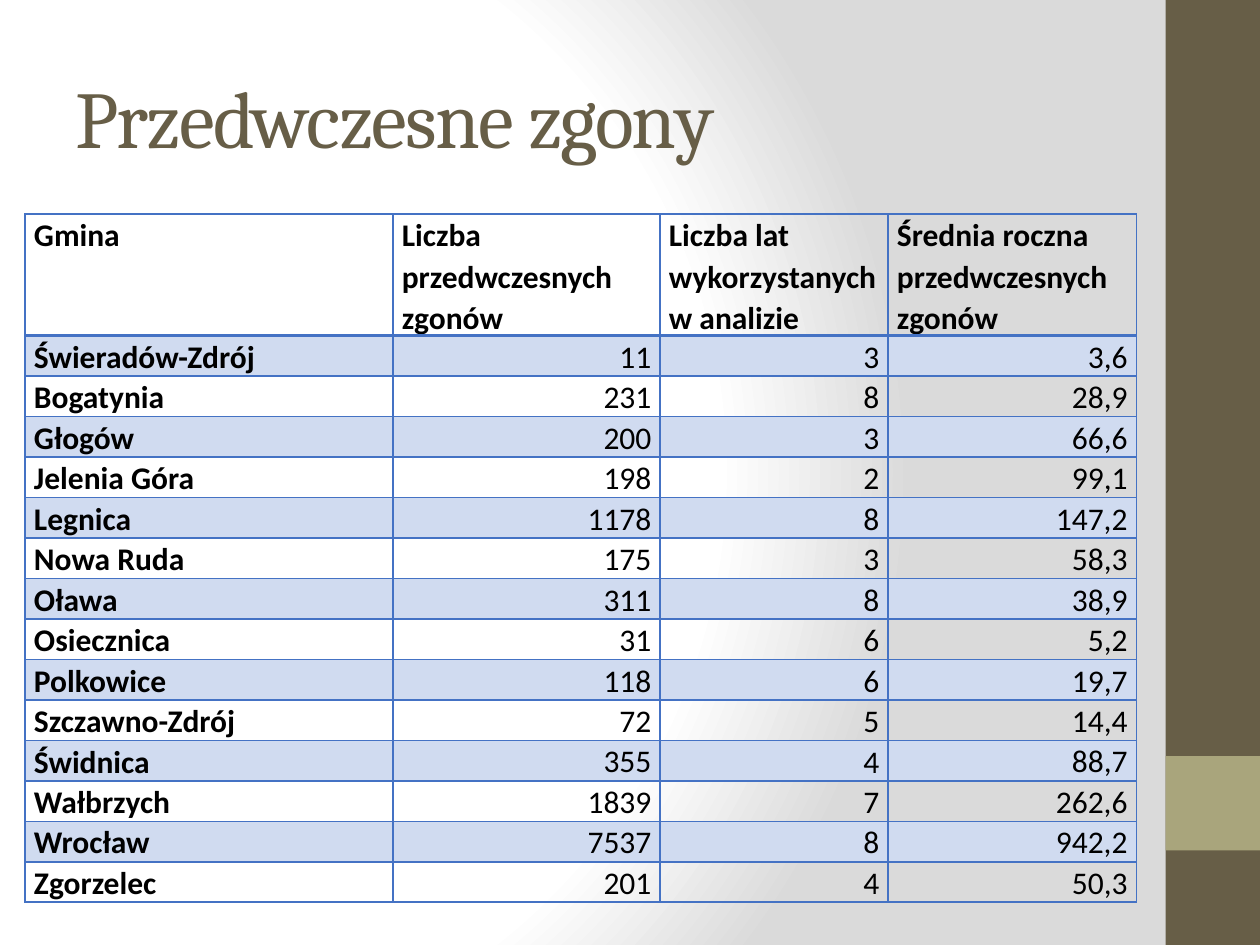
import pptx
import pptx.dml.color
import pptx.enum.shapes
import pptx.enum.text
import pptx.oxml
import pptx.oxml.ns
import pptx.util

ALIGN = pptx.enum.text.PP_ALIGN
ANCHOR = pptx.enum.text.MSO_ANCHOR
NS = pptx.oxml.ns.nsdecls("a")

HEAD = ["Gmina", "Liczba przedwczesnych zgonów",
        "Liczba lat wykorzystanych w analizie",
        "Średnia roczna przedwczesnych zgonów"]
TOWNS = [
    ("Świeradów-Zdrój", "11", "3", "3,6"),
    ("Bogatynia", "231", "8", "28,9"),
    ("Głogów", "200", "3", "66,6"),
    ("Jelenia Góra", "198", "2", "99,1"),
    ("Legnica", "1178", "8", "147,2"),
    ("Nowa Ruda", "175", "3", "58,3"),
    ("Oława", "311", "8", "38,9"),
    ("Osiecznica", "31", "6", "5,2"),
    ("Polkowice", "118", "6", "19,7"),
    ("Szczawno-Zdrój", "72", "5", "14,4"),
    ("Świdnica", "355", "4", "88,7"),
    ("Wałbrzych", "1839", "7", "262,6"),
    ("Wrocław", "7537", "8", "942,2"),
    ("Zgorzelec", "201", "4", "50,3"),
]


def grid(count):
    """Length of a number of quarter-inch grid steps (40 by 30 on the slide)."""
    return pptx.util.Inches(count / 4)


def tint(code):
    return pptx.dml.color.RGBColor.from_string(code)


def write(frame, text, size=18, font="Calibri", color="000000", bold=False,
          align=ALIGN.LEFT, lead=None, track=None):
    para = frame.paragraphs[0]
    para.alignment = align
    if lead:
        para.line_spacing = lead
    run = para.add_run()
    run.text = text
    run.font.size = pptx.util.Pt(size)
    run.font.name = font
    run.font.bold = bold
    run.font.color.rgb = tint(color)
    if track:
        run.font._element.set("spc", str(track * 100))


class Page:
    brown, olive = "675E47", "A9A57C"
    blue, pale = "4472C4", "D0DBF0"
    thin, thick = 1, 2.25

    def __init__(self, deck):
        self.slide = deck.slides.add_slide(deck.slide_layouts[6])

    def ground(self, stops):
        """Circular gradient over the whole slide."""
        fill = self.slide.background.fill
        fill.gradient()
        old = self.slide.element.find(".//" + pptx.oxml.ns.qn("a:gradFill"))
        marks = "".join(
            f'<a:gs pos="{pos * 1000}"><a:srgbClr val="{code}"/></a:gs>'
            for pos, code in stops)
        new = pptx.oxml.parse_xml(
            f'<a:gradFill {NS} rotWithShape="1"><a:gsLst>{marks}</a:gsLst>'
            '<a:path path="circle"><a:fillToRect l="20000" t="50000" '
            'r="100000" b="50000"/></a:path></a:gradFill>')
        old.getparent().replace(old, new)

    def block(self, col, row, wide, high, color):
        kind = pptx.enum.shapes.MSO_SHAPE.RECTANGLE
        shape = self.slide.shapes.add_shape(
            kind, grid(col), grid(row), grid(wide), grid(high))
        shape.shadow.inherit = False
        shape.fill.solid()
        shape.fill.fore_color.rgb = tint(color)
        shape.line.fill.background()

    def title(self, col, row, wide, high, text):
        box = self.slide.shapes.add_textbox(
            grid(col), grid(row), grid(wide), grid(high))
        frame = box.text_frame
        frame.word_wrap = True
        frame.vertical_anchor = ANCHOR.MIDDLE
        write(frame, text, size=46, font="Cambria", color=self.brown, track=-1)

    def edge(self, cell, top, base):
        """Draw the four borders of a cell."""
        props = cell._tc.get_or_add_tcPr()
        sides = {"L": self.thin, "R": self.thin, "T": top, "B": base}
        for side, width in sides.items():
            props.append(pptx.oxml.parse_xml(
                f'<a:ln{side} {NS} w="{pptx.util.Pt(width)}"><a:solidFill>'
                f'<a:srgbClr val="{self.blue}"/></a:solidFill></a:ln{side}>'))

    def cell(self, cell, text, row, col):
        value = row > 0 and col > 0
        cell.margin_left = cell.margin_right = pptx.util.Inches(0.07)
        cell.margin_top = cell.margin_bottom = 0
        cell.vertical_anchor = (
            ANCHOR.BOTTOM if value and col != 2 else ANCHOR.TOP)
        self.edge(cell, self.thick if row == 1 else self.thin,
                  self.thick if row == 0 else self.thin)
        if row % 2:
            cell.fill.solid()
            cell.fill.fore_color.rgb = tint(self.pale)
        else:
            cell.fill.background()
        write(cell.text_frame, text, bold=not value, lead=1.07,
              align=ALIGN.RIGHT if value else ALIGN.LEFT)

    def table(self, col, row, wides, highs, data):
        table = self.slide.shapes.add_table(
            len(highs), len(wides), grid(col), grid(row),
            grid(sum(wides)), grid(sum(highs))).table
        for part, wide in zip(table.columns, wides):
            part.width = grid(wide)
        for part, high in zip(table.rows, highs):
            part.height = grid(high)
        for r, line in enumerate(data):
            for c, text in enumerate(line):
                self.cell(table.cell(r, c), text, r, c)


def main():
    deck = pptx.Presentation()
    deck.slide_width, deck.slide_height = grid(40), grid(30)
    page = Page(deck)

    # Background and side band
    page.ground([(0, "FFFFFF"), (75, "FFFFFF"), (100, "DADADA")])
    page.block(37, 0, 3, 30, page.brown)
    page.block(37, 24, 3, 3, page.olive)

    # Heading
    page.title(2, 1.2, 33.3, 5, "Przedwczesne zgony")

    # Deaths by municipality: the header is three lines high
    line = 1.28
    page.table(0.8, 6.8, [11.68, 8.48, 7.24, 7.88],
               [3 * line] + [line] * len(TOWNS), [HEAD] + TOWNS)

    deck.save("out.pptx")


if __name__ == "__main__":
    main()
